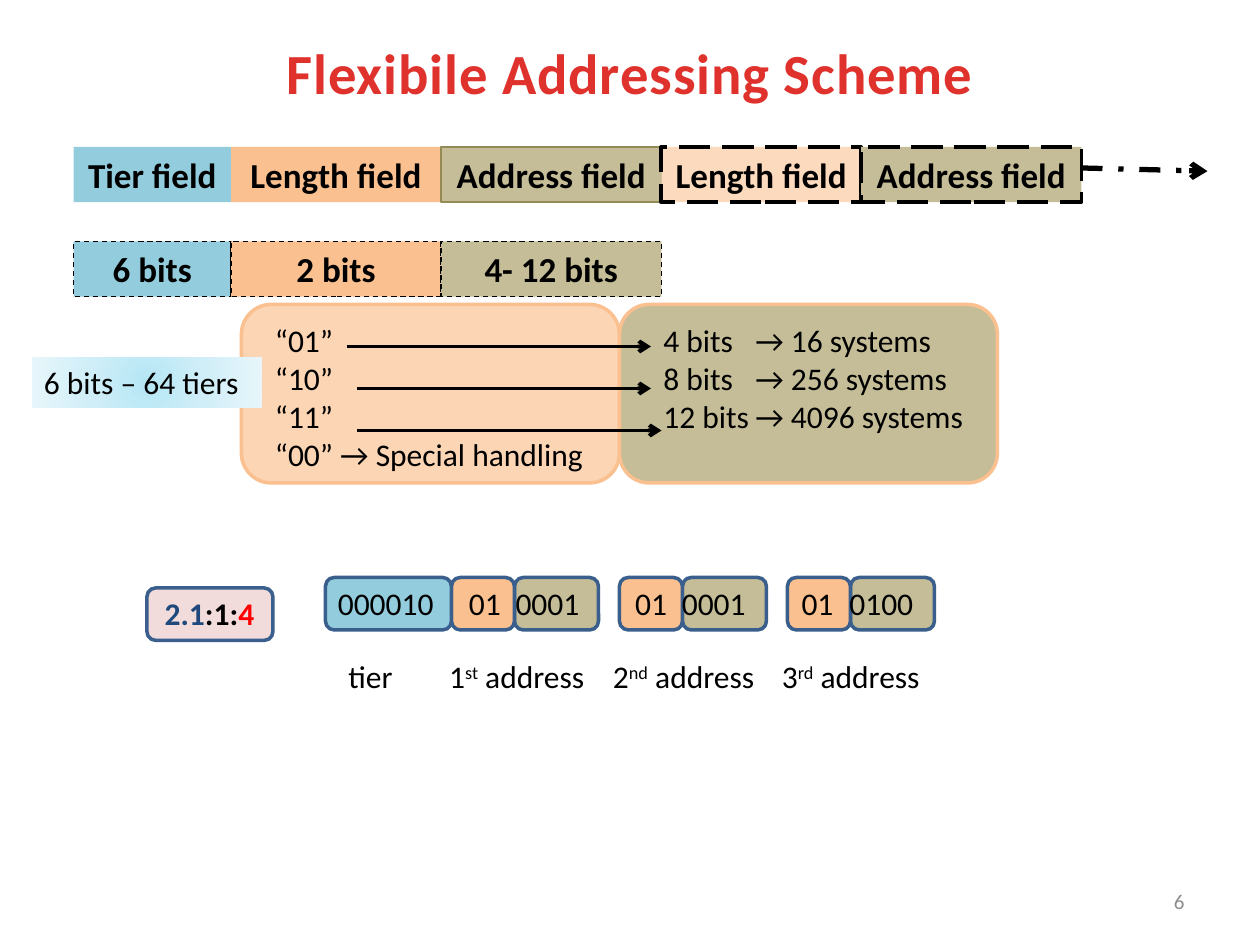
"""Build the flexible addressing scheme slide."""
from lxml import etree
from pptx import Presentation
from pptx import util as u
from pptx.dml.color import RGBColor
from pptx.enum import dml, shapes, text
from pptx.oxml import parse_xml
from pptx.oxml.ns import nsdecls, qn

BLUE, ORANGE, OLIVE, PALE = "93CDDD", "FAC090", "C4BD97", "FCD5B5"
NAVY, BLACK = "3A5F8C", "000000"
RECT, ROUND = shapes.MSO_SHAPE.RECTANGLE, shapes.MSO_SHAPE.ROUNDED_RECTANGLE
LEFT, CENTER, RIGHT = text.PP_ALIGN.LEFT, text.PP_ALIGN.CENTER, text.PP_ALIGN.RIGHT
DASH, LONG = dml.MSO_LINE.DASH, dml.MSO_LINE.LONG_DASH


def rgb(value):
    """Return the colour for a hex string."""
    return RGBColor.from_string(value)


def grid(*cells):
    """Turn grid cells of a twelfth of an inch into lengths."""
    return [u.Inches(c / 12) for c in cells]


class Deck:
    """Hold the style and the current slide."""

    font = "Calibri"

    def __init__(self):
        """Open a presentation with one title-only slide."""
        self.prs = Presentation()
        self.prs.slide_width, self.prs.slide_height = grid(120, 90)
        self.s = self.prs.slides.add_slide(self.prs.slide_layouts[5])

    def style(self, r, size, color=BLACK, bold=False):
        """Format one run."""
        r.font.name, r.font.size, r.font.bold = self.font, u.Pt(size), bold
        r.font.color.rgb = rgb(color)

    def fill_text(self, sp, words, size, color=BLACK, bold=False, align=LEFT,
                  anchor=text.MSO_ANCHOR.TOP, tabs=()):
        """Fill a shape with text, one paragraph a line, with tab stops in inches."""
        tf = sp.text_frame
        tf.text, tf.word_wrap, tf.vertical_anchor = words, True, anchor
        tf.auto_size = text.MSO_AUTO_SIZE.NONE
        for p in tf.paragraphs:
            p.alignment = align
            if tabs:
                tab_list = etree.SubElement(p._p.get_or_add_pPr(), qn("a:tabLst"))
            for tab in tabs:
                etree.SubElement(tab_list, qn("a:tab"), pos=str(int(u.Inches(tab))), algn="l")
            for r in p.runs:
                self.style(r, size, color, bold)
        return tf

    def title(self, words, at, color):
        """Place and format the title."""
        sp = self.s.shapes.title
        sp.left, sp.top, sp.width, sp.height = grid(*at)
        tf = self.fill_text(sp, words, 32.4, color, True, CENTER, text.MSO_ANCHOR.MIDDLE)
        tf.paragraphs[0].runs[0]._r.get_or_add_rPr().set("spc", "50")

    def box(self, kind, at, fill, line=None, width=2, dash=None):
        """Add a filled preset shape."""
        sp = self.s.shapes.add_shape(kind, *grid(*at))
        sp.shadow.inherit = False
        sp.fill.solid()
        sp.fill.fore_color.rgb = rgb(fill)
        if line:
            sp.line.color.rgb, sp.line.width = rgb(line), u.Pt(width)
            sp.line.dash_style = dash
        else:
            sp.line.fill.background()
        return sp

    def field(self, words, at, *look):
        """Add a rectangle with a bold centred label."""
        sp = self.box(RECT, at, *look)
        self.fill_text(sp, words, 20, bold=True, align=CENTER)

    def glow(self, sp, inner, middle, outer):
        """Give a shape a gradient that spreads from its centre."""
        stops = "".join(f'<a:gs pos="{pos}"><a:srgbClr val="{c}"/></a:gs>' for pos, c in
                        ((0, inner), (50000, middle), (100000, outer)))
        fill = parse_xml(f'<a:gradFill {nsdecls("a")}><a:gsLst>{stops}</a:gsLst>'
                         '<a:path path="circle"><a:fillToRect l="50000" t="50000" '
                         'r="50000" b="50000"/></a:path></a:gradFill>')
        solid = sp._element.spPr.find(qn("a:solidFill"))
        solid.getparent().replace(solid, fill)

    def label(self, words, at, size=18, **look):
        """Add a text box."""
        return self.fill_text(self.s.shapes.add_textbox(*grid(*at)), words, size, **look)

    def pieces(self, p, parts):
        """Append runs of words, colour, weight and raised position."""
        for words, color, bold, raised in parts:
            r = p.add_run()
            r.text = words
            self.style(r, 18, color, bold)
            if raised:
                r._r.get_or_add_rPr().set("baseline", "30000")

    def arrow(self, start, end, width=2.25, dash=None):
        """Add a line with an open arrowhead at its end."""
        c = self.s.shapes.add_connector(shapes.MSO_CONNECTOR.STRAIGHT, *grid(*start, *end))
        c.line.color.rgb, c.line.width = rgb(BLACK), u.Pt(width)
        c.line.dash_style = dash
        spPr = c._element.spPr
        etree.SubElement(spPr.get_or_add_ln(), qn("a:tailEnd"), type="arrow")
        etree.SubElement(spPr, qn("a:effectLst"))


def main():
    """Build and save the slide."""
    d = Deck()
    d.title("Flexibile Addressing Scheme", (6, 3.6, 108, 6.4), "E0322D")

    for x in (81, 65, 49):
        d.box(ROUND, (x, 55, 8, 5), OLIVE, NAVY)
        d.box(ROUND, (x - 6, 55, 6, 5), ORANGE, NAVY)
    d.box(ROUND, (59, 29, 36, 17), OLIVE, ORANGE)
    d.box(ROUND, (23, 29, 36, 17), PALE, ORANGE)

    columns = ((7, 15, BLUE), (22, 20, ORANGE), (42, 21, OLIVE))
    edges = ((), (), ("948A54", 0.75))
    names = ("Tier field", "Length field", "Address field")
    sizes = ("6 bits", "2 bits", "4- 12 bits")
    for (x, w, fill), edge, name, bits in zip(columns, edges, names, sizes):
        d.field(name, (x, 14, w, 5.25), fill, *edge)
        d.field(bits, (x, 23, w, 5.25), fill, BLACK, 0.75, DASH)
    d.field(names[1], (63, 14, 19, 5.25), "FCDABD", BLACK, 2.25, LONG)
    d.field(names[2], (82, 14, 21, 5.25), OLIVE, BLACK, 2.25, LONG)
    d.arrow((103, 16), (115, 16.3), 3, dml.MSO_LINE.DASH_DOT)

    tiers = d.box(RECT, (3, 34, 22, 4.85), "D0EEF8")
    d.glow(tiers, "B5E6F5", "D0EEF8", "E8F6FB")
    d.fill_text(tiers, "6 bits – 64 tiers", 18)
    d.label("“01”\n“10”\n“11”\n“00” → Special handling", (25, 30, 36, 15.75))
    d.label("4 bits\t→ 16 systems\n8 bits\t→ 256 systems\n12 bits\t→ 4096 systems",
            (62, 30, 39, 15.75), tabs=(0.73,))
    for x1, x2, y in ((33, 62, 33), (34, 62, 37), (34, 63, 41)):
        d.arrow((x1, y), (x2, y))

    d.box(ROUND, (14, 56, 12, 5), "F2DCDB", NAVY)
    example = d.label("", (14.5, 56, 11.4, 4.85))
    d.pieces(example.paragraphs[0], (("2.1", "1F497D", True, False),
                                     (":1:", BLACK, True, False),
                                     ("4", "FF0000", True, False)))
    captions = d.label("tier", (32, 62, 61, 4.85), tabs=(0.8, 2.1, 3.44))
    for number, suffix in (("1", "st"), ("2", "nd"), ("3", "rd")):
        d.pieces(captions.paragraphs[0], (("\t" + number, BLACK, False, False),
                                          (suffix, BLACK, False, True),
                                          (" address", BLACK, False, False)))
    d.box(ROUND, (31, 55, 12, 5), BLUE, NAVY)
    d.label("000010\t01\t0001\t01\t0001\t01\t0100", (31, 55, 61, 4.85),
            tabs=(1.04, 1.41, 2.36, 2.73, 3.68, 4.06))
    d.label("6", (86, 83.4, 28, 4.8), 12, color="8C8C8C", align=RIGHT,
            anchor=text.MSO_ANCHOR.MIDDLE)
    d.prs.save("out.pptx")


if __name__ == "__main__":
    main()
